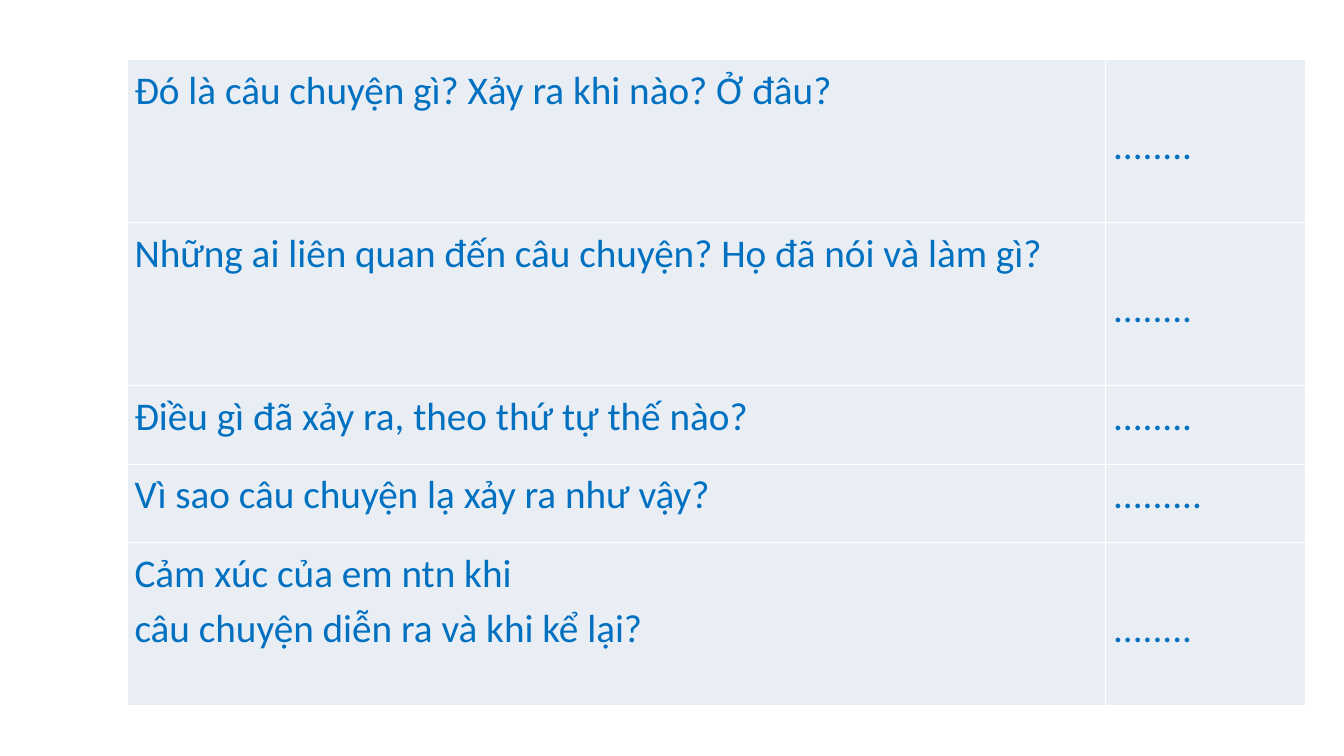
import pptx
import pptx.dml.color
import pptx.enum.text
import pptx.oxml
import pptx.oxml.ns
import pptx.util

Cm = pptx.util.Cm
Pt = pptx.util.Pt
BLUE = pptx.dml.color.RGBColor(0x00, 0x70, 0xC0)
PALE = pptx.dml.color.RGBColor(0xE9, 0xED, 0xF4)
WHITE = pptx.dml.color.RGBColor(0xFF, 0xFF, 0xFF)

LINE = Cm(1.39)
TALL, SHORT = Cm(4.11), Cm(1.98)
WIDTHS = [Cm(24.66), Cm(5.03)]
ROWS = [
    (TALL, "Đó là câu chuyện gì? Xảy ra khi nào? Ở đâu?", "........"),
    (TALL, "Những ai liên quan đến câu chuyện? Họ đã nói và làm gì?", "........"),
    (SHORT, "Điều gì đã xảy ra, theo thứ tự thế nào?", "........"),
    (SHORT, "Vì sao câu chuyện lạ xảy ra như vậy?", "........."),
    (TALL, "Cảm xúc của em ntn khi\ncâu chuyện diễn ra và khi kể lại?", "........"),
]


def add_border(cell):
    """Draw a thin white line on all four sides of a cell."""
    props = cell._tc.get_or_add_tcPr()
    for side in ("lnL", "lnR", "lnT", "lnB"):
        props.append(pptx.oxml.parse_xml(
            f'<a:{side} {pptx.oxml.ns.nsdecls("a")} w="{Pt(1)}"><a:solidFill>'
            f'<a:srgbClr val="{WHITE}"/></a:solidFill></a:{side}>'))


def fill_cell(cell, text, top):
    """Write text into a cell, starting at the given top margin."""
    add_border(cell)
    cell.fill.solid()
    cell.fill.fore_color.rgb = PALE
    cell.margin_left = cell.margin_right = Cm(0.19)
    cell.margin_top, cell.margin_bottom = top, 0
    cell.text = text
    for para in cell.text_frame.paragraphs:
        para.alignment = pptx.enum.text.PP_ALIGN.JUSTIFY
        para.line_spacing = 1.15
        para.font.name = "Calibri"
        para.font.size = Pt(28)
        para.font.color.rgb = BLUE


def add_grid(slide):
    """Add the table of story questions and answer gaps."""
    height = sum(row[0] for row in ROWS)
    table = slide.shapes.add_table(
        len(ROWS), len(WIDTHS), Cm(3.2), Cm(1.5), sum(WIDTHS), height).table
    table.first_row = table.horz_banding = False
    for column, width in zip(table.columns, WIDTHS):
        column.width = width
    for index, (tall, question, answer) in enumerate(ROWS):
        table.rows[index].height = tall
        fill_cell(table.cell(index, 0), question, 0)
        fill_cell(table.cell(index, 1), answer, LINE if tall == TALL else 0)


def main():
    """Build the slide and save it."""
    deck = pptx.Presentation()
    deck.slide_width, deck.slide_height = Cm(33.87), Cm(19.05)
    add_grid(deck.slides.add_slide(deck.slide_layouts[6]))
    deck.save("out.pptx")


if __name__ == "__main__":
    main()
